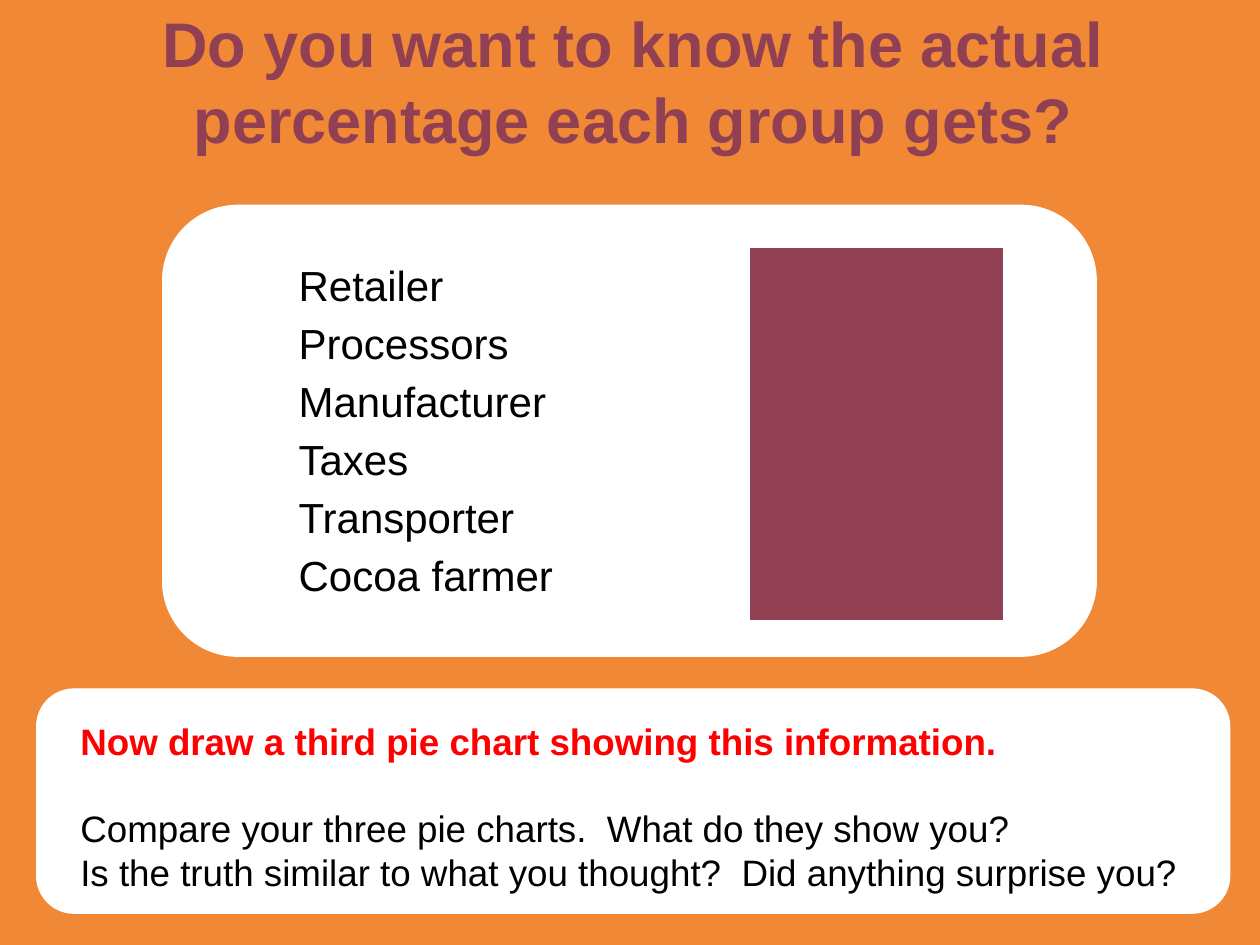
from pptx import Presentation
from pptx.dml.color import RGBColor
from pptx.enum.shapes import MSO_SHAPE
from pptx.enum.text import MSO_ANCHOR, MSO_AUTO_SIZE, PP_ALIGN
from pptx.util import Cm, Pt

ROUNDED, RECT = MSO_SHAPE.ROUNDED_RECTANGLE, MSO_SHAPE.RECTANGLE
TOP, NO_FIT = MSO_ANCHOR.TOP, MSO_AUTO_SIZE.NONE
LEFT, CENTER = PP_ALIGN.LEFT, PP_ALIGN.CENTER

THEME = {
    "font": "Arial",
    "background": "F18835", "panel": "FFFFFF", "accent": "913F53",
    "text": "000000", "task": "FF0000",
    "title_size": 36, "list_size": 24, "task_size": 21,
}

TITLE = "Do you want to know the actual percentage each group gets?"
GROUPS = ["Retailer", "Processors", "Manufacturer", "Taxes", "Transporter", "Cocoa farmer"]
TASK = "Now draw a third pie chart showing this information."
QUESTIONS = [
    "Compare your three pie charts.  What do they show you?",
    "Is the truth similar to what you thought?  Did anything surprise you?",
]

# left, top, width, height in cm
TITLE_BOX = (0.15, 0, 25.22, 3.28)
TASK_PANEL = (0.74, 13.89, 24.05, 4.52)
GROUP_PANEL = (3.28, 4.14, 18.82, 9.09)
GROUP_BOX = (5.82, 4.98, 10.21, 7.26)
TASK_BOX = (1.42, 14.38, 23.67, 4.67)
ANSWER_COVER = (15.11, 4.98, 5.13, 7.54)


def color(name):
    return RGBColor.from_string(THEME[name])


def add_block(slide, kind, box, fill):
    sp = slide.shapes.add_shape(kind, *map(Cm, box))
    sp.shadow.inherit = False
    sp.fill.solid()
    sp.fill.fore_color.rgb = color(fill)
    sp.line.color.rgb = color("panel")
    sp.line.width = Pt(0.75)


def prepare_frame(sp):
    tf = sp.text_frame
    tf.word_wrap = True
    tf.auto_size = NO_FIT
    tf.vertical_anchor = TOP
    tf.margin_left = tf.margin_right = Cm(0.2)
    tf.margin_top = tf.margin_bottom = Cm(0.1)
    return tf


def add_text(tf, text, size, fill="text", bold=False, align=LEFT, spacing=1.0, before=0):
    """Fill the empty first paragraph, or append a new one."""
    p = tf.add_paragraph() if tf.text else tf.paragraphs[0]
    p.alignment = align
    p.line_spacing = spacing
    p.space_before = Pt(before)
    r = p.add_run()
    r.text = text
    r.font.name = THEME["font"]
    r.font.size = Pt(THEME[size])
    r.font.bold = bold
    r.font.color.rgb = color(fill)


def main():
    prs = Presentation()
    prs.slide_width, prs.slide_height = Cm(25.4), Cm(19.05)
    s = prs.slides.add_slide(prs.slide_layouts[5])
    s.background.fill.solid()
    s.background.fill.fore_color.rgb = color("background")

    title = s.shapes.title
    title.left, title.top, title.width, title.height = map(Cm, TITLE_BOX)
    add_text(prepare_frame(title), TITLE, "title_size", fill="accent", bold=True, align=CENTER)

    add_block(s, ROUNDED, TASK_PANEL, "panel")
    add_block(s, ROUNDED, GROUP_PANEL, "panel")

    tf = prepare_frame(s.shapes.add_textbox(*map(Cm, GROUP_BOX)))
    for group in GROUPS:
        add_text(tf, group, "list_size", spacing=1.15)

    tf = prepare_frame(s.shapes.add_textbox(*map(Cm, TASK_BOX)))
    add_text(tf, TASK, "task_size", fill="task", bold=True)
    for i, question in enumerate(QUESTIONS):
        add_text(tf, question, "task_size", before=0 if i else 25)

    add_block(s, RECT, ANSWER_COVER, "accent")
    prs.save("out.pptx")


if __name__ == "__main__":
    main()
